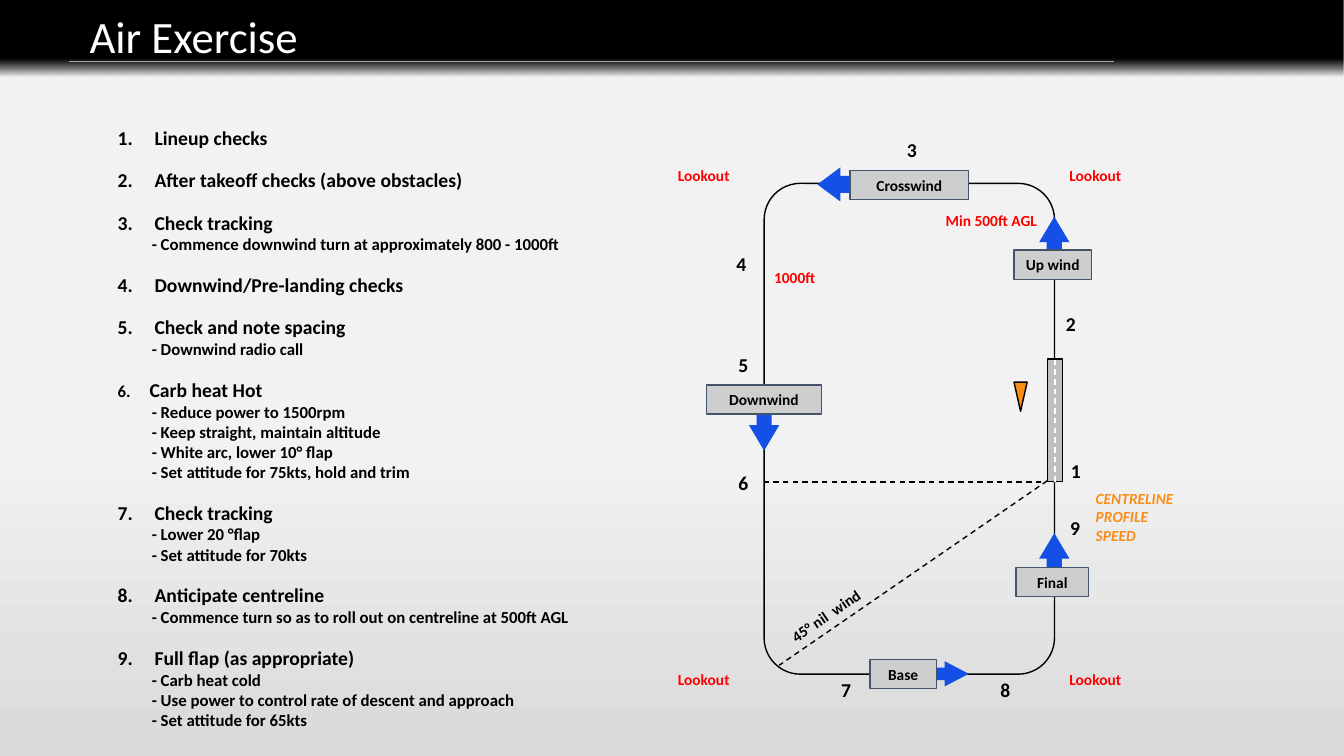
from dataclasses import dataclass
from typing import Any, NamedTuple, Optional

from pptx import Presentation
from pptx import util as u
from pptx.dml import color
from pptx.enum import dml, shapes, text
from pptx.oxml import ns, xmlchemy

KIND = shapes.MSO_SHAPE
ALIGN = text.PP_ALIGN
ANCHOR = text.MSO_ANCHOR


@dataclass(frozen=True)
class Theme:
    font: str = "Calibri"
    black: str = "000000"
    white: str = "FFFFFF"
    red: str = "FF0000"
    orange: str = "FA8D16"
    blue: str = "1450E6"
    tarmac: str = "BFBFBF"
    leg_fill: str = "CECECE"
    leg_line: str = "44546A"
    rule: str = "A6A6A6"
    sky: str = "F2F2F2"
    ground: str = "D9D9D9"
    title: float = 32
    item: float = 14
    step: float = 12
    label: float = 11


THEME = Theme()


class Box(NamedTuple):
    left: float
    top: float
    width: float
    height: float


class Arrow(NamedTuple):
    kind: Any
    box: Box
    head: float
    turn: float = 0


class Leg(NamedTuple):
    name: str
    left: float
    top: float
    width: float


class Label(NamedTuple):
    lines: tuple
    box: Box
    ink: str = THEME.red
    size: float = THEME.label
    bold: bool = True
    italic: bool = False
    align: Any = ALIGN.LEFT
    wrap: bool = False
    inset: float = 6.5
    turn: float = 0


class Check(NamedTuple):
    title: str
    steps: tuple = ()
    number_size: float = THEME.item
    indent: float = 26.4


def apply(target: Any, values: dict) -> None:
    for name, value in values.items():
        setattr(target, name, value)


def rgb(code: str) -> color.RGBColor:
    return color.RGBColor.from_string(code)


def points(*lengths: float) -> list:
    return [u.Pt(length) for length in lengths]


def add_run(paragraph: Any, words: str, size: float, ink: str = THEME.black,
            bold: bool = True, italic: bool = False) -> None:
    run = paragraph.add_run()
    run.text = words
    apply(run.font, dict(name=THEME.font, size=u.Pt(size), bold=bold, italic=italic))
    run.font.color.rgb = rgb(ink)


def set_frame(frame: Any, inset: float, wrap: bool, anchor: Any) -> None:
    apply(frame, dict(margin_left=u.Pt(inset), margin_right=u.Pt(inset),
                      margin_top=u.Pt(3.6), margin_bottom=u.Pt(3.6),
                      word_wrap=wrap, vertical_anchor=anchor))


def add_shape(slide: Any, kind: Any, box: Box, fill: Optional[str] = None,
              line: Optional[str] = None, turn: float = 0) -> Any:
    shape = slide.shapes.add_shape(kind, *points(*box))
    shape.shadow.inherit = False
    shape.rotation = turn
    if fill:
        shape.fill.solid()
        shape.fill.fore_color.rgb = rgb(fill)
    else:
        shape.fill.background()
    if line:
        shape.line.color.rgb = rgb(line)
        shape.line.width = u.Pt(1)
    else:
        shape.line.fill.background()
    return shape


def add_line(slide: Any, ends: tuple, ink: str, dashed: bool = True) -> Any:
    line = slide.shapes.add_connector(shapes.MSO_CONNECTOR.STRAIGHT, *points(*ends))
    line.line.color.rgb = rgb(ink)
    line.line.width = u.Pt(1)
    if dashed:
        line.line.dash_style = dml.MSO_LINE.DASH
    line._element.spPr.append(xmlchemy.OxmlElement("a:effectLst"))
    return line


def add_label(slide: Any, label: Label) -> None:
    box = slide.shapes.add_textbox(*points(*label.box))
    box.rotation = label.turn
    set_frame(box.text_frame, label.inset, label.wrap, ANCHOR.TOP)
    for index, words in enumerate(label.lines):
        paragraph = box.text_frame.add_paragraph() if index else box.text_frame.paragraphs[0]
        paragraph.alignment = label.align
        add_run(paragraph, words, label.size, label.ink, label.bold, label.italic)


def set_gradient(fill: Any, owner: Any, stops: tuple) -> None:
    """Fill from top to bottom with (position %, colour, opacity %) stops."""
    fill.gradient()
    fill.gradient_angle = 270
    stop_list = next(owner.iter(ns.qn("a:gsLst")))
    for old in list(stop_list):
        stop_list.remove(old)
    for position, code, opacity in stops:
        stop = xmlchemy.OxmlElement("a:gs")
        stop.set("pos", str(position * 1000))
        tint = xmlchemy.OxmlElement("a:srgbClr")
        tint.set("val", code)
        alpha = xmlchemy.OxmlElement("a:alpha")
        alpha.set("val", str(opacity * 1000))
        tint.append(alpha)
        stop.append(tint)
        stop_list.append(stop)


def add_checklist(slide: Any, checks: tuple) -> None:
    frame = slide.shapes.add_textbox(*points(77, 86.4, 404, 448.6)).text_frame
    set_frame(frame, 7.2, True, ANCHOR.TOP)
    for number, check in enumerate(checks, 1):
        heading = frame.add_paragraph() if number > 1 else frame.paragraphs[0]
        heading.space_before = u.Pt(13.4 if number > 1 else 0)
        hang = u.Pt(check.indent)
        heading._p.get_or_add_pPr().set("marL", str(hang))
        heading._p.get_or_add_pPr().set("indent", str(-hang))
        add_run(heading, f"{number}.\t", check.number_size)
        add_run(heading, check.title, THEME.item)
        for words in check.steps:
            step = frame.add_paragraph()
            step._p.get_or_add_pPr().set("marL", str(u.Pt(24.4)))
            add_run(step, f"- {words}", THEME.step)


CHECKS = (
    Check("Lineup checks"),
    Check("After takeoff checks (above obstacles)"),
    Check("Check tracking", ("Commence downwind turn at approximately 800 - 1000ft",)),
    Check("Downwind/Pre-landing checks"),
    Check("Check and note spacing", ("Downwind radio call",)),
    Check("Carb heat Hot", ("Reduce power to 1500rpm", "Keep straight, maintain altitude",
                            "White arc, lower 10° flap",
                            "Set attitude for 75kts, hold and trim"), THEME.step, 22.8),
    Check("Check tracking", ("Lower 20 °flap", "Set attitude for 70kts")),
    Check("Anticipate centreline",
          ("Commence turn so as to roll out on centreline at 500ft AGL",)),
    Check("Full flap (as appropriate)",
          ("Carb heat cold", "Use power to control rate of descent and approach",
           "Set attitude for 65kts")),
)
ARROWS = (
    Arrow(KIND.UP_ARROW, Box(742.3, 154.8, 21.6, 35.3), 0.84),
    Arrow(KIND.DOWN_ARROW, Box(588.2, 115.2, 24.5, 33.1), 0.67, 90),
    Arrow(KIND.DOWN_ARROW, Box(535, 286.6, 21.6, 35.3), 0.84),
    Arrow(KIND.RIGHT_ARROW, Box(657.4, 472.3, 34.6, 18), 0.96),
    Arrow(KIND.UP_ARROW, Box(742.3, 380.9, 21.6, 36), 0.84),
)
LEGS = (Leg("Up wind", 724.3, 178.6, 55.4), Leg("Crosswind", 607, 121.7, 85),
        Leg("Downwind", 504.7, 275, 82.1), Leg("Base", 621.4, 470.9, 47.5),
        Leg("Final", 725.8, 405.4, 51.8))
STATIONS = ((757.4, 324), (753.8, 219.6), (640.1, 95), (518.4, 176.4), (519.8, 248.4),
            (519.8, 332.6), (593.3, 481), (707, 481), (756.7, 365))
NOTES = (
    *(Label(("Lookout",), Box(x, y, 51.1, 20.2)) for x in (477.7, 757.4) for y in (115.2, 475.2)),
    Label(("Min 500ft AGL",), Box(663.1, 147.6, 90, 20.9), align=ALIGN.CENTER, wrap=True),
    Label(("1000ft",), Box(546.5, 187.9, 43.2, 20.2)),
    Label(("CENTRELINE", "PROFILE", "SPEED"), Box(776.2, 345.6, 69.1, 46.8),
          THEME.orange, italic=True),
    Label(("45° nil  wind",), Box(549.4, 412.6, 131, 20.9), THEME.black,
          wrap=True, inset=7.2, turn=325.7),
)


def main() -> None:
    deck = Presentation()
    apply(deck, dict(slide_width=u.Pt(960), slide_height=u.Pt(540)))
    slide = deck.slides.add_slide(deck.slide_layouts[6])
    set_gradient(slide.background.fill, slide._element,
                 ((0, THEME.sky, 100), (60, THEME.sky, 100), (100, THEME.ground, 100)))

    # Circuit, runway and windsock
    circuit = add_shape(slide, KIND.ROUNDED_RECTANGLE, Box(545.8, 131, 207.4, 350.6),
                        line=THEME.black)
    circuit.adjustments[0] = 0.125
    runway = add_shape(slide, KIND.RECTANGLE, Box(748.1, 256.3, 10.8, 87.8),
                       THEME.tarmac, THEME.black)
    centreline = add_line(slide, (753.5, 344.1, 753.5, 256.3), THEME.white)
    centreline.begin_connect(runway, 2)
    centreline.end_connect(runway, 0)
    add_shape(slide, KIND.ISOSCELES_TRIANGLE, Box(724.3, 272.9, 9.4, 20.9),
              THEME.orange, THEME.black, 180)

    # Sight lines to the threshold
    for sight_line in ((748.1, 343.4, 556.6, 475.2), (743.8, 344.2, 545.8, 344.2)):
        add_line(slide, sight_line, THEME.black)

    # Direction arrows beneath the leg names
    for arrow in ARROWS:
        pointer = add_shape(slide, arrow.kind, arrow.box, THEME.blue, turn=arrow.turn)
        pointer.adjustments[0], pointer.adjustments[1] = 0.5, arrow.head
    for leg in LEGS:
        plate = add_shape(slide, KIND.RECTANGLE, Box(leg.left, leg.top, leg.width, 20.9),
                          THEME.leg_fill, THEME.leg_line)
        set_frame(plate.text_frame, 7.2, True, ANCHOR.MIDDLE)
        plate.text_frame.paragraphs[0].alignment = ALIGN.CENTER
        add_run(plate.text_frame.paragraphs[0], leg.name, THEME.label)

    # Station numbers, notes and checklist
    for number, (left, top) in enumerate(STATIONS, 1):
        add_label(slide, Label((str(number),), Box(left, top, 22.3, 24.5), THEME.black,
                               THEME.item, align=ALIGN.CENTER, inset=7.2))
    for note in NOTES:
        add_label(slide, note)
    add_checklist(slide, CHECKS)

    # Title band
    band = add_shape(slide, KIND.RECTANGLE, Box(0, 0, 960, 54.7))
    set_gradient(band.fill, band._element, tuple(
        (position, THEME.black, opacity)
        for position, opacity in ((0, 100), (76, 100), (88, 55), (100, 0))))
    add_label(slide, Label(("Air Exercise",), Box(56.9, 2.9, 738.7, 46.1), THEME.white,
                           THEME.title, bold=False, wrap=True, inset=7.2))
    add_line(slide, (49, 43.9, 795.6, 43.9), THEME.rule, dashed=False)

    deck.save("out.pptx")


if __name__ == "__main__":
    main()
